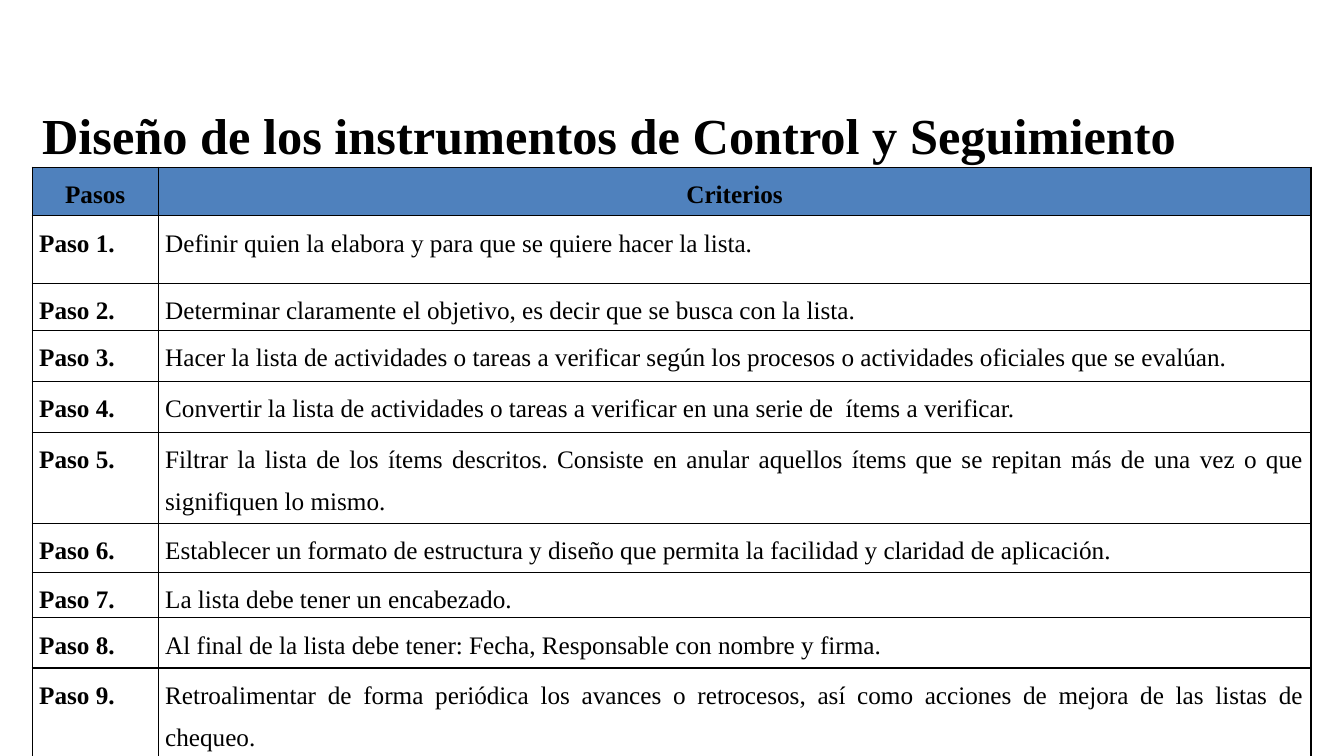
from lxml.etree import SubElement
from pptx import Presentation
from pptx.dml.color import RGBColor
from pptx.enum.text import MSO_ANCHOR, PP_ALIGN
from pptx.oxml.ns import qn
from pptx.util import Pt

BLACK = RGBColor(0x00, 0x00, 0x00)
HEADER_BLUE = RGBColor(0x4F, 0x81, 0xBD)

TITLE = "Diseño de los instrumentos de Control y Seguimiento"
HEADINGS = ("Pasos", "Criterios")
# Row height in points and criterion of each step
STEPS = [
    (48.5, "Definir quien la elabora y para que se quiere hacer la lista."),
    (33.5, "Determinar claramente el objetivo, es decir que se busca con la lista."),
    (36.5, "Hacer la lista de actividades o tareas a verificar según los procesos "
           "o actividades oficiales que se evalúan."),
    (36.5, "Convertir la lista de actividades o tareas a verificar en una serie de  "
           "ítems a verificar."),
    (63, "Filtrar la lista de los ítems descritos. Consiste en anular aquellos ítems "
         "que se repitan más de una vez o que signifiquen lo mismo."),
    (35, "Establecer un formato de estructura y diseño que permita la facilidad "
         "y claridad de aplicación."),
    (30, "La lista debe tener un encabezado."),
    (36, "Al final de la lista debe tener: Fecha, Responsable con nombre y firma."),
    (60, "Retroalimentar de forma periódica los avances o retrocesos, así como "
         "acciones de mejora de las listas de chequeo."),
]
HEADER_HEIGHT = 34.5
COLUMN_WIDTHS = (90, 823.5)
CELL_FORMAT = {"margin_left": Pt(5), "margin_right": Pt(5),
               "margin_top": 0, "margin_bottom": 0}


def write(paragraph, text, size, bold, spacing, align):
    paragraph.line_spacing = spacing
    paragraph.alignment = align
    run = paragraph.add_run()
    run.text = text
    font_format = {"name": "Times New Roman", "size": Pt(size), "bold": bold}
    for attribute, value in font_format.items():
        setattr(run.font, attribute, value)
    run.font.color.rgb = BLACK


def add_borders(cell):
    properties = cell._tc.get_or_add_tcPr()
    for position, side in enumerate(("lnL", "lnR", "lnT", "lnB")):
        line = properties.makeelement(qn(f"a:{side}"), {"w": str(Pt(1))})
        properties.insert(position, line)
        fill = SubElement(line, qn("a:solidFill"))
        SubElement(fill, qn("a:srgbClr"), val=str(BLACK))


presentation = Presentation()
presentation.slide_width = Pt(960)
presentation.slide_height = Pt(540)
slide = presentation.slides.add_slide(presentation.slide_layouts[6])

title = slide.shapes.add_textbox(Pt(23), Pt(60), Pt(828), Pt(77)).text_frame
title.word_wrap = True
title.vertical_anchor = MSO_ANCHOR.MIDDLE
write(title.paragraphs[0], TITLE, 36, True, 0.9, PP_ALIGN.LEFT)

heights = [HEADER_HEIGHT] + [height for height, _ in STEPS]
rows = [HEADINGS] + [(f"Paso {number}.", criterion)
                     for number, (_, criterion) in enumerate(STEPS, 1)]
steps_table = slide.shapes.add_table(
    len(rows), len(HEADINGS), Pt(23), Pt(119.5),
    Pt(sum(COLUMN_WIDTHS)), Pt(sum(heights))).table
for column, width in zip(steps_table.columns, COLUMN_WIDTHS):
    column.width = Pt(width)

for row_index, (height, texts) in enumerate(zip(heights, rows)):
    steps_table.rows[row_index].height = Pt(height)
    is_header = row_index == 0
    for column_index, text in enumerate(texts):
        cell = steps_table.cell(row_index, column_index)
        for attribute, value in CELL_FORMAT.items():
            setattr(cell, attribute, value)
        if is_header:
            cell.fill.solid()
            cell.fill.fore_color.rgb = HEADER_BLUE
        else:
            cell.fill.background()
        add_borders(cell)
        write(cell.text_frame.paragraphs[0], text, 18,
              is_header or column_index == 0, 1.5,
              PP_ALIGN.CENTER if is_header else PP_ALIGN.JUSTIFY)

presentation.save("out.pptx")
